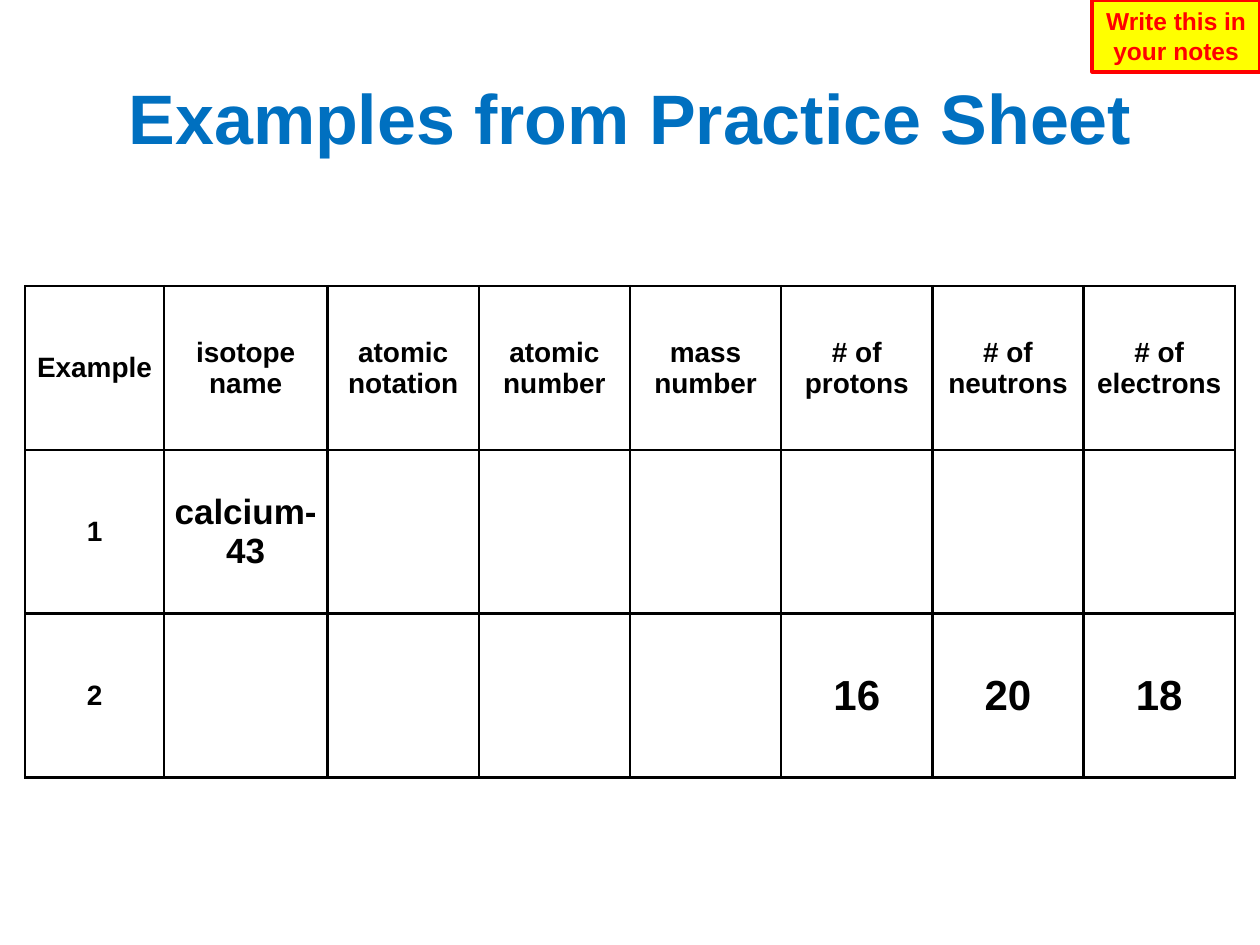
import pptx
import pptx.util
import pptx.dml.color
import pptx.enum.shapes
import pptx.enum.text
import pptx.oxml
import pptx.oxml.ns

Inches = pptx.util.Inches
Pt = pptx.util.Pt

COLORS = {
    "black": "000000",
    "title": "0070C0",
    "note_fill": "FFFF00",
    "note_red": "FF0000",
}
COLUMN_WIDTHS = [1.1, 1.3] + [1.2] * 6
ROW_HEIGHT = 1.3
HEADERS = [
    "Example", "isotope name", "atomic notation", "atomic number",
    "mass number", "# of protons", "# of neutrons", "# of electrons",
]
ROWS = [
    [(header, 16) for header in HEADERS],
    [("1", 16), ("calcium-43", 20)] + [("", 16)] * 6,
    [("2", 16)] + [("", 16)] * 4 + [("16", 24), ("20", 24), ("18", 24)],
]


def rgb(name):
    return pptx.dml.color.RGBColor.from_string(COLORS[name])


class SlideBuilder:
    font = "Arial"

    def __init__(self, slide):
        self.slide = slide

    def add_text(self, frame, text, size, color):
        frame.word_wrap = True
        paragraph = frame.paragraphs[0]
        paragraph.alignment = pptx.enum.text.PP_ALIGN.CENTER
        run = paragraph.add_run()
        run.text = text
        run.font.name = self.font
        run.font.size = Pt(size)
        run.font.bold = True
        run.font.color.rgb = rgb(color)

    def title(self, text, left, top, width, height):
        box = self.slide.shapes.add_textbox(
            Inches(left), Inches(top), Inches(width), Inches(height))
        box.text_frame.vertical_anchor = pptx.enum.text.MSO_ANCHOR.MIDDLE
        self.add_text(box.text_frame, text, 40, "title")

    def note(self, text, left, top, width, height):
        shape = self.slide.shapes.add_shape(
            pptx.enum.shapes.MSO_SHAPE.RECTANGLE,
            Inches(left), Inches(top), Inches(width), Inches(height))
        shape.shadow.inherit = False
        shape.fill.solid()
        shape.fill.fore_color.rgb = rgb("note_fill")
        shape.line.color.rgb = rgb("note_red")
        shape.line.width = Pt(2.25)
        shape.text_frame.vertical_anchor = pptx.enum.text.MSO_ANCHOR.TOP
        shape.text_frame.auto_size = pptx.enum.text.MSO_AUTO_SIZE.SHAPE_TO_FIT_TEXT
        self.add_text(shape.text_frame, text, 14, "note_red")

    def borders(self, cell):
        properties = cell._tc.get_or_add_tcPr()
        namespace = pptx.oxml.ns.nsdecls("a")
        for index, side in enumerate(("lnL", "lnR", "lnT", "lnB")):
            properties.insert(index, pptx.oxml.parse_xml(
                f'<a:{side} {namespace} w="{Pt(1.5)}"><a:solidFill>'
                f'<a:srgbClr val="{COLORS["black"]}"/></a:solidFill></a:{side}>'))

    def table(self, rows, left, top, column_widths, row_height):
        table = self.slide.shapes.add_table(
            len(rows), len(column_widths), Inches(left), Inches(top),
            Inches(sum(column_widths)), Inches(row_height * len(rows))).table
        table.first_row = False
        table.horz_banding = False
        for column, width in zip(table.columns, column_widths):
            column.width = Inches(width)
        for row, values in zip(table.rows, rows):
            row.height = Inches(row_height)
            for cell, (text, size) in zip(row.cells, values):
                cell.fill.background()
                cell.vertical_anchor = pptx.enum.text.MSO_ANCHOR.MIDDLE
                cell.margin_left = cell.margin_right = Inches(0.07)
                cell.margin_top = cell.margin_bottom = 0
                self.borders(cell)
                if text:
                    self.add_text(cell.text_frame, text, size, "black")


def main():
    presentation = pptx.Presentation()
    presentation.slide_width = Inches(10)
    presentation.slide_height = Inches(7.5)
    builder = SlideBuilder(
        presentation.slides.add_slide(presentation.slide_layouts[6]))
    builder.table(ROWS, 0.2, 2.27, COLUMN_WIDTHS, ROW_HEIGHT)
    builder.title("Examples from Practice Sheet", 0.5, 0.3, 9, 1.25)
    builder.note("Write this in your notes", 8.67, 0, 1.33, 0.57)
    presentation.save("out.pptx")


if __name__ == "__main__":
    main()
